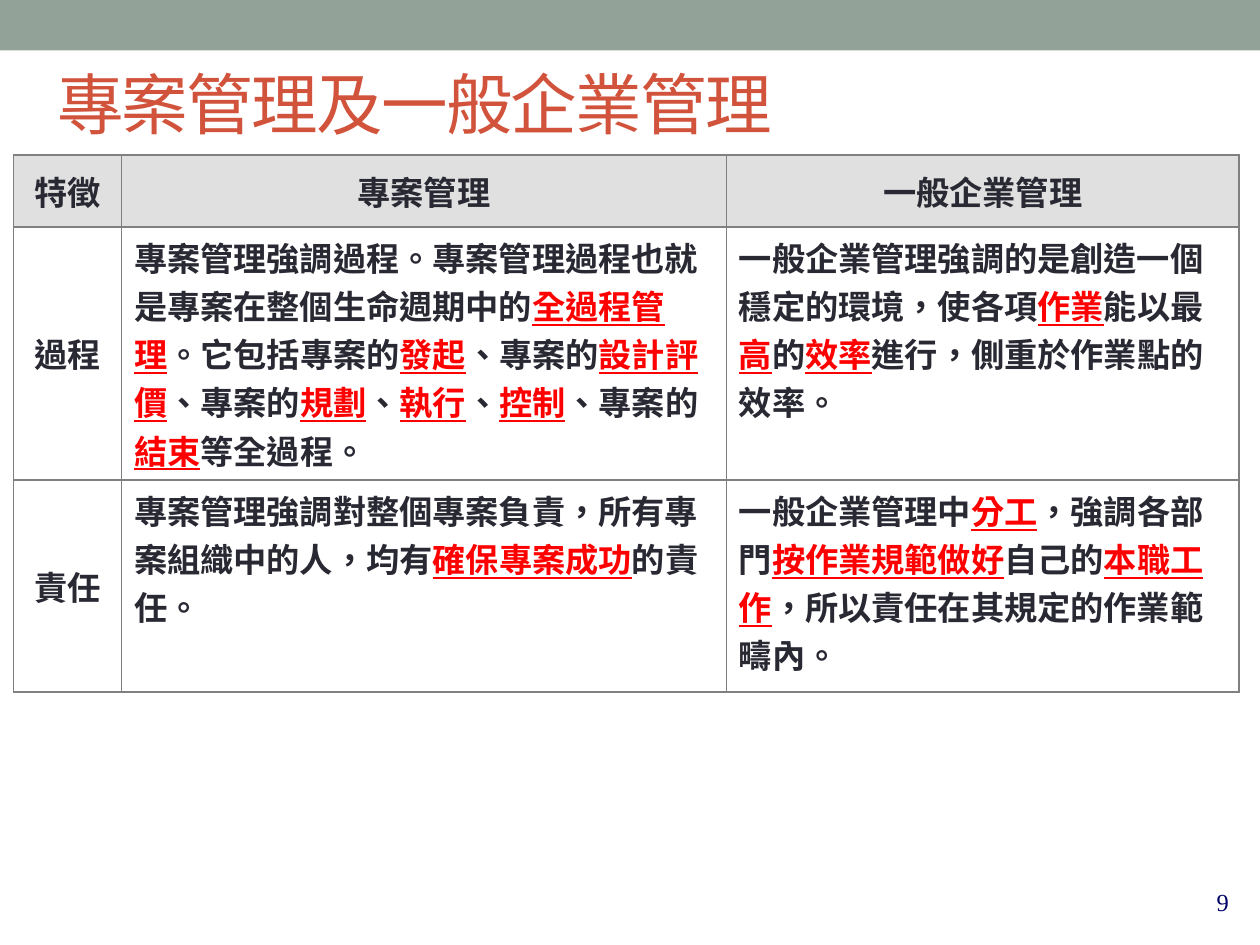
from lxml.etree import SubElement
from pptx import Presentation
from pptx.dml.color import RGBColor
from pptx.enum.shapes import MSO_SHAPE
from pptx.enum.text import MSO_ANCHOR, PP_ALIGN
from pptx.oxml.ns import qn
from pptx.util import Pt

SAGE = RGBColor(0x93, 0xA2, 0x99)
RUST = RGBColor(0xD2, 0x53, 0x3C)
INK = RGBColor(0x29, 0x29, 0x34)
RED = RGBColor(0xFF, 0x00, 0x00)
NAVY = RGBColor(0x00, 0x00, 0x66)
GREY = RGBColor(0xE0, 0xE0, 0xE0)
WHITE = RGBColor(0xFF, 0xFF, 0xFF)
BORDER = RGBColor(0x80, 0x80, 0x80)

COL_WIDTHS = (61.7, 345.6, 293)
ROW_HEIGHTS = (41, 144.6, 121.2)
ROWS = (
    ("特徵", "專案管理", "一般企業管理"),
    (
        "過程",
        "專案管理強調過程。專案管理過程也就是專案在整個生命週期中的*全過程管理*。"
        "它包括專案的*發起*、專案的*設計評價*、專案的*規劃*、*執行*、*控制*、"
        "專案的*結束*等全過程。",
        "一般企業管理強調的是創造一個穩定的環境，使各項*作業*能以最*高*的*效率*進行，"
        "側重於作業點的效率。",
    ),
    (
        "責任",
        "專案管理強調對整個專案負責，所有專案組織中的人，均有*確保專案成功*的責任。",
        "一般企業管理中*分工*，強調各部門*按作業規範做好*自己的*本職工作*，"
        "所以責任在其規定的作業範疇內。",
    ),
)


def style_run(r, font, size, color):
    """Set the font, size, colour and language of a run."""
    r.font.name = font
    r.font.size = Pt(size)
    r.font.color.rgb = color
    r.font._element.set("lang", "zh-TW")


def add_band(slide, x, y, w, h):
    """Draw the coloured band across the top."""
    sp = slide.shapes.add_shape(MSO_SHAPE.RECTANGLE, Pt(x), Pt(y), Pt(w), Pt(h))
    sp.shadow.inherit = False
    sp.fill.solid()
    sp.fill.fore_color.rgb = SAGE
    sp.line.fill.background()


def add_title(slide, text, x, y, w, h):
    """Place and format the title placeholder."""
    sp = slide.shapes.title
    sp.left, sp.top, sp.width, sp.height = Pt(x), Pt(y), Pt(w), Pt(h)
    tf = sp.text_frame
    tf.text = text
    tf.vertical_anchor = MSO_ANCHOR.MIDDLE
    p = tf.paragraphs[0]
    p.alignment = PP_ALIGN.LEFT
    r = p.runs[0]
    style_run(r, "Arial", 38, RUST)
    r.font._element.set("spc", "-100")


def add_page_number(slide, text, x, y, w, h):
    """Place the page number at the bottom right of its box."""
    tf = slide.shapes.add_textbox(Pt(x), Pt(y), Pt(w), Pt(h)).text_frame
    tf.word_wrap = True
    tf.vertical_anchor = MSO_ANCHOR.BOTTOM
    tf.text = text
    p = tf.paragraphs[0]
    p.alignment = PP_ALIGN.RIGHT
    style_run(p.runs[0], "Times New Roman", 14, NAVY)


def set_borders(cell):
    """Give a cell a thin line on all four sides, ahead of its fill."""
    tc_pr = cell._tc.get_or_add_tcPr()
    for i, side in enumerate(("a:lnL", "a:lnR", "a:lnT", "a:lnB")):
        ln = SubElement(tc_pr, qn(side), w=str(Pt(1)))
        fill = SubElement(ln, qn("a:solidFill"))
        SubElement(fill, qn("a:srgbClr"), val=str(BORDER))
        tc_pr.insert(i, ln)


def fill_cell(cell, text, is_header, centred):
    """Write a cell, with the parts between asterisks emphasised."""
    set_borders(cell)
    cell.fill.solid()
    cell.fill.fore_color.rgb = GREY if is_header else WHITE
    cell.vertical_anchor = MSO_ANCHOR.MIDDLE if centred else MSO_ANCHOR.TOP
    p = cell.text_frame.paragraphs[0]
    p.alignment = PP_ALIGN.CENTER if centred else PP_ALIGN.LEFT
    p._p.get_or_add_pPr().set("hangingPunct", "0")
    for i, part in enumerate(text.split("*")):
        is_key = i % 2 == 1
        r = p.add_run()
        r.text = part
        style_run(r, "Arial", 19, RED if is_key else INK)
        r.font.bold = True
        r.font.underline = is_key


def add_comparison(slide, x, y):
    """Build the comparison table from its top left corner."""
    table = slide.shapes.add_table(
        len(ROWS), len(COL_WIDTHS), Pt(x), Pt(y),
        Pt(sum(COL_WIDTHS)), Pt(sum(ROW_HEIGHTS)),
    ).table
    table.horz_banding = False
    for col, width in zip(table.columns, COL_WIDTHS):
        col.width = Pt(width)
    for i, (row, height, texts) in enumerate(zip(table.rows, ROW_HEIGHTS, ROWS)):
        row.height = Pt(height)
        for j, (cell, text) in enumerate(zip(row.cells, texts)):
            fill_cell(cell, text, i == 0, i == 0 or j == 0)


def main():
    """Build the slide and save it."""
    prs = Presentation()
    prs.slide_width, prs.slide_height = Pt(720), Pt(540)
    slide = prs.slides.add_slide(prs.slide_layouts[5])
    add_band(slide, 0, 0, 720, 28.8)
    add_page_number(slide, "9", 536.6, 491, 172.8, 36)
    add_title(slide, "專案管理及一般企業管理", 25.4, 23.4, 604, 70.6)
    add_comparison(slide, 7.8, 88.6)
    prs.save("out.pptx")


if __name__ == "__main__":
    main()
